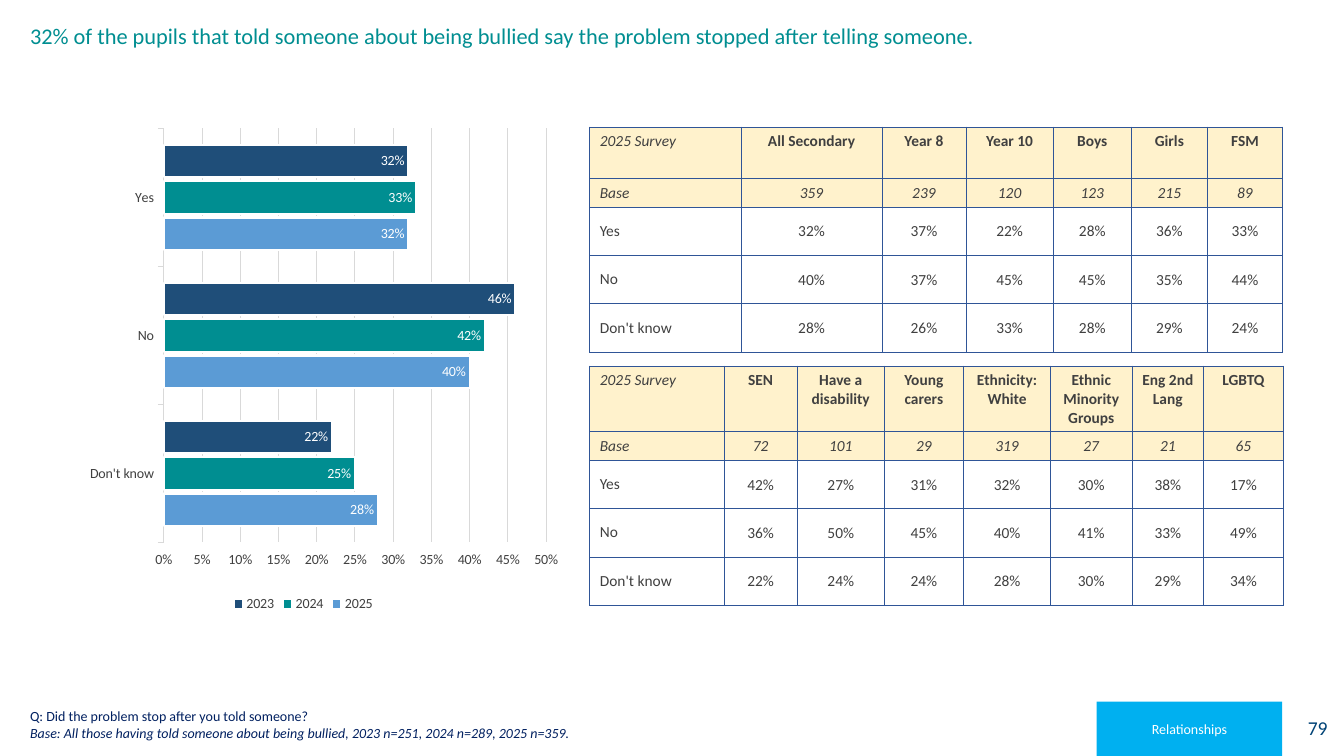
from lxml import etree
from pptx import Presentation
from pptx.chart.data import CategoryChartData
from pptx.dml.color import RGBColor
from pptx.enum.chart import XL_CHART_TYPE, XL_LABEL_POSITION, XL_LEGEND_POSITION, XL_TICK_MARK
from pptx.enum.shapes import MSO_SHAPE
from pptx.enum.text import MSO_ANCHOR, PP_ALIGN
from pptx.oxml import parse_xml
from pptx.oxml.ns import nsdecls, qn
from pptx.util import Inches, Pt

BAR, BOTTOM = XL_CHART_TYPE.BAR_CLUSTERED, XL_LEGEND_POSITION.BOTTOM
INSIDE_END, OUTSIDE = XL_LABEL_POSITION.INSIDE_END, XL_TICK_MARK.OUTSIDE
RECT = MSO_SHAPE.RECTANGLE
TOP, MIDDLE, LOW = MSO_ANCHOR.TOP, MSO_ANCHOR.MIDDLE, MSO_ANCHOR.BOTTOM
LEFT, CENTER, RIGHT = PP_ALIGN.LEFT, PP_ALIGN.CENTER, PP_ALIGN.RIGHT

FONT = "Calibri"
COLORS = {"title": "008E91", "note": "002060", "number": "004376", "tag": "00B0F0",
          "white": "FFFFFF", "text": "404040", "header": "FFF2CC", "border": "2F5597",
          "grid": "D9D9D9", "2025": "5B9BD5", "2024": "008E91", "2023": "1F4E79"}
RGB = {name: RGBColor.from_string(value) for name, value in COLORS.items()}

prs = Presentation()
prs.slide_width, prs.slide_height = Inches(13.33), Inches(7.5)
s = prs.slides.add_slide(prs.slide_layouts[6])


def place(x, y, w, h):
    """Turn percentages of the slide's width and height into lengths."""
    W, H = prs.slide_width / 100, prs.slide_height / 100
    return int(x * W), int(y * H), int(w * W), int(h * H)


def style(font, size, color, bold=False, italic=False):
    font.name, font.size, font.color.rgb = FONT, Pt(size), RGB[color]
    font.bold, font.italic = bold, italic


# Page number and section tag
for text, box, fill, size, color, align in [
        ("79", (95.1, 92.67, 4.43, 7.2), "white", 14, "number", RIGHT),
        ("Relationships", (81.6, 92.8, 13.8, 7.2), "tag", 10, "white", CENTER)]:
    sp = s.shapes.add_shape(RECT, *place(*box))
    sp.shadow.inherit = False
    sp.fill.solid()
    sp.fill.fore_color.rgb = RGB[fill]
    sp.line.fill.background()
    tf = sp.text_frame
    tf.text, tf.vertical_anchor = text, MIDDLE
    p = tf.paragraphs[0]
    p.alignment = align
    style(p.runs[0].font, size, color)

# Title and footnote
for text, box, anchor, size, color in [
        ("32% of the pupils that told someone about being bullied say the problem "
         "stopped after telling someone.", (1.5, 2.67, 95.55, 13.07), TOP, 16, "title"),
        ("Q: Did the problem stop after you told someone?\n"
         "Base: All those having told someone about being bullied, "
         "2023 n=251, 2024 n=289, 2025 n=359.", (1.5, 92.8, 83.93, 5.87), LOW, 10, "note")]:
    tf = s.shapes.add_textbox(*place(*box)).text_frame
    tf.word_wrap, tf.vertical_anchor, tf.text = True, anchor, text
    for i, p in enumerate(tf.paragraphs):
        style(p.runs[0].font, size, color, italic=i > 0)
        if anchor == TOP:
            p.line_spacing = 0.9

# Tables: top edge, column widths in inches, rows of text
ROW_HEIGHTS = [0.51, 0.27, 0.48, 0.48, 0.48]
TABLES = [
    (16.8, [1.5, 1.4, 0.83, 0.87, 0.77, 0.76, 0.74], [
        ["2025 Survey", "All Secondary", "Year 8", "Year 10", "Boys", "Girls", "FSM"],
        ["Base", "359", "239", "120", "123", "215", "89"],
        ["Yes", "32%", "37%", "22%", "28%", "36%", "33%"],
        ["No", "40%", "37%", "45%", "45%", "35%", "44%"],
        ["Don't know", "28%", "26%", "33%", "28%", "29%", "24%"]]),
    (48.4, [1.33, 0.73, 0.86, 0.79, 0.86, 0.81, 0.71, 0.79], [
        ["2025 Survey", "SEN", "Have a disability", "Young carers", "Ethnicity: White",
         "Ethnic Minority Groups", "Eng 2nd Lang", "LGBTQ"],
        ["Base", "72", "101", "29", "319", "27", "21", "65"],
        ["Yes", "42%", "27%", "31%", "32%", "30%", "38%", "17%"],
        ["No", "36%", "50%", "45%", "40%", "41%", "33%", "49%"],
        ["Don't know", "22%", "24%", "24%", "28%", "30%", "29%", "34%"]])]

for top, widths, rows in TABLES:
    table = s.shapes.add_table(len(rows), len(widths), *place(43.88, top, 51.53, 29.6)).table
    table.first_row = table.horz_banding = False
    for column, width in zip(table.columns, widths):
        column.width = Inches(width)
    for r, (height, row) in enumerate(zip(ROW_HEIGHTS, rows)):
        table.rows[r].height = Inches(height)
        for c, text in enumerate(row):
            cell = table.cell(r, c)
            cell.text = text
            cell.vertical_anchor = MIDDLE if r else TOP
            if r > 1 and c:
                cell.margin_left = cell.margin_right = cell.margin_top = Inches(0.01)
                cell.margin_bottom = 0
            p = cell.text_frame.paragraphs[0]
            p.alignment = CENTER if c else LEFT
            style(p.runs[0].font, 11, "text", bold=r == 0 and c > 0,
                  italic=r == 1 or (r == 0 and c == 0))
            # Borders come before the fill in the cell's properties
            for side in ("lnL", "lnR", "lnT", "lnB"):
                cell._tc.get_or_add_tcPr().append(parse_xml(
                    f'<a:{side} {nsdecls("a")} w="{Pt(0.5)}"><a:solidFill>'
                    f'<a:srgbClr val="{COLORS["border"]}"/></a:solidFill></a:{side}>'))
            if r < 2:
                cell.fill.solid()
                cell.fill.fore_color.rgb = RGB["header"]
            else:
                cell.fill.background()

# Bar chart by survey year
data = CategoryChartData(number_format="0%")
data.categories = ["Don't know", "No", "Yes"]
data.add_series("2025", [0.28, 0.40, 0.32])
data.add_series("2024", [0.25, 0.42, 0.33])
data.add_series("2023", [0.22, 0.46, 0.32])
chart = s.shapes.add_chart(BAR, *place(0, 12.13, 45.15, 69.33), data).chart
style(chart.font, 10, "text")
chart.has_title = False
chart.has_legend = True
chart.legend.position, chart.legend.include_in_layout = BOTTOM, False
style(chart.legend.font, 10, "text")

plot = chart.plots[0]
plot.gap_width, plot.overlap, plot.vary_by_categories = 100, -12, False
for series in plot.series:
    series.format.fill.solid()
    series.format.fill.fore_color.rgb = RGB[series.name]
    series.format.line.color.rgb = RGB["white"]
    series.format.line.width = Pt(1.5)
    labels = series.data_labels
    labels.show_value, labels.position = True, INSIDE_END
    labels.number_format, labels.number_format_is_linked = "0%", False
    style(labels.font, 10, "white")

# Axes and gridlines
cat, val = chart.category_axis, chart.value_axis
for axis in (cat, val):
    axis.major_tick_mark = OUTSIDE
    style(axis.tick_labels.font, 10, "text")
val.minimum_scale, val.maximum_scale, val.major_unit = 0, 0.5, 0.05
val.tick_labels.number_format, val.tick_labels.number_format_is_linked = "0%", False
val.format.line.fill.background()
val.has_major_gridlines = True
for line in (cat.format.line, val.major_gridlines.format.line):
    line.color.rgb, line.width = RGB["grid"], Pt(0.75)

# Fixed inner plot area, as shares of the chart
plot_area = chart._chartSpace.chart.plotArea
for old in plot_area.findall(qn("c:layout")):
    plot_area.remove(old)
layout = etree.Element(qn("c:layout"))
manual = etree.SubElement(layout, qn("c:manualLayout"))
for tag, value in [("layoutTarget", "inner"), ("xMode", "edge"), ("yMode", "edge"),
                   ("x", 0.27), ("y", 0.07), ("w", 0.63), ("h", 0.79)]:
    etree.SubElement(manual, qn(f"c:{tag}")).set("val", str(value))
plot_area.insert(0, layout)

prs.save("out.pptx")
